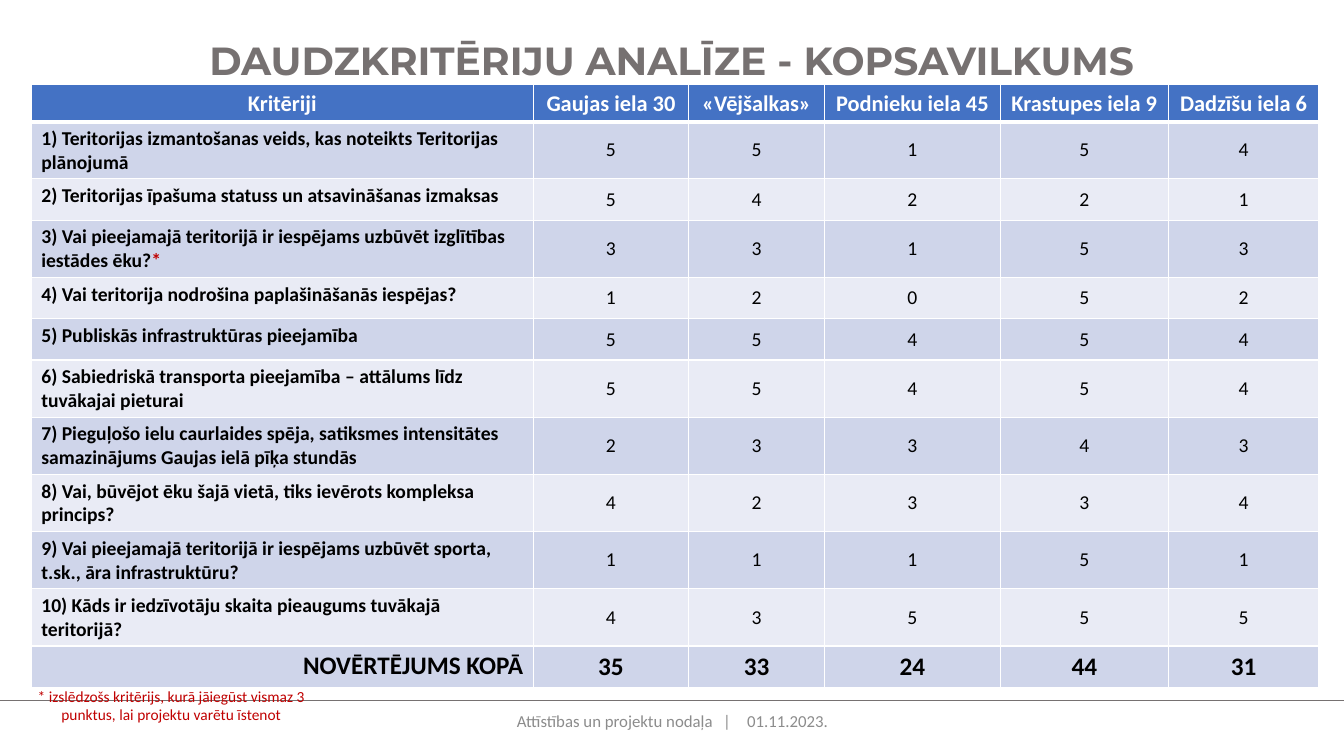
from lxml import etree
from pptx import Presentation
from pptx.dml.color import RGBColor
from pptx.enum.shapes import MSO_CONNECTOR
from pptx.enum.text import MSO_ANCHOR, MSO_AUTO_SIZE, PP_ALIGN
from pptx.oxml.ns import qn
from pptx.util import Inches, Pt

LEFT, CENTER, RIGHT = PP_ALIGN.LEFT, PP_ALIGN.CENTER, PP_ALIGN.RIGHT
TOP, MIDDLE = MSO_ANCHOR.TOP, MSO_ANCHOR.MIDDLE
STRAIGHT, NO_FIT = MSO_CONNECTOR.STRAIGHT, MSO_AUTO_SIZE.NONE

# Content
TITLE = "DAUDZKRITĒRIJU ANALĪZE - KOPSAVILKUMS"
HEADINGS = ["Kritēriji", "Gaujas iela 30", "«Vējšalkas»", "Podnieku iela 45",
            "Krastupes iela 9", "Dadzīšu iela 6"]
# Label, scores, lines that the label takes
CRITERIA = [
    ("1) Teritorijas izmantošanas veids, kas noteikts Teritorijas plānojumā",
     [5, 5, 1, 5, 4], 2),
    ("2) Teritorijas īpašuma statuss un atsavināšanas izmaksas", [5, 4, 2, 2, 1], 1),
    ("3) Vai pieejamajā teritorijā ir iespējams uzbūvēt izglītības iestādes ēku?*",
     [3, 3, 1, 5, 3], 2),
    ("4) Vai teritorija nodrošina paplašināšanās iespējas?", [1, 2, 0, 5, 2], 1),
    ("5) Publiskās infrastruktūras pieejamība", [5, 5, 4, 5, 4], 1),
    ("6) Sabiedriskā transporta pieejamība – attālums līdz tuvākajai pieturai",
     [5, 5, 4, 5, 4], 2),
    ("7) Pieguļošo ielu caurlaides spēja, satiksmes intensitātes samazinājums "
     "Gaujas ielā pīķa stundās", [2, 3, 3, 4, 3], 2),
    ("8) Vai, būvējot ēku šajā vietā, tiks ievērots kompleksa princips?",
     [4, 2, 3, 3, 4], 2),
    ("9) Vai pieejamajā teritorijā ir iespējams uzbūvēt sporta, t.sk., āra "
     "infrastruktūru?", [1, 1, 1, 5, 1], 2),
    ("10) Kāds ir iedzīvotāju skaita pieaugums tuvākajā teritorijā?",
     [4, 3, 5, 5, 5], 2),
]
TOTAL_LABEL = "NOVĒRTĒJUMS KOPĀ"
FOOTNOTE = ("* izslēdzošs kritērijs, kurā jāiegūst vismaz 3 punktus, "
            "lai projektu varētu īstenot")
DEPARTMENT, SEPARATOR, DATE = "Attīstības un projektu nodaļa", " | ", "01.11.2023."

# Formats
COLORS = {"grey": "767171", "footer": "8C8C8C", "header": "4472C4", "odd": "CFD5EA",
          "even": "E9EBF5", "white": "FFFFFF", "black": "000000", "red": "C00000"}
FORMATS = {
    "title": {"name": "Montserrat", "size": Pt(28), "bold": True, "color": "grey"},
    "header": {"name": "Calibri", "size": Pt(16), "bold": True, "color": "white"},
    "label": {"name": "Calibri", "size": Pt(14), "bold": True, "color": "black"},
    "mark": {"name": "Calibri", "size": Pt(14), "bold": True, "color": "red"},
    "score": {"name": "Calibri", "size": Pt(14), "bold": False, "color": "black"},
    "total": {"name": "Calibri", "size": Pt(18), "bold": True, "color": "black"},
    "footnote": {"name": "Calibri", "size": Pt(11), "bold": False, "color": "red"},
    "footer": {"name": "Calibri", "size": Pt(12), "bold": False, "color": "footer"},
}
COLUMN_WIDTHS = [4.98, 1.54, 1.35, 1.74, 1.67, 1.49]
HEADER_HEIGHT = 0.36
LINE_HEIGHTS = {1: 0.41, 2: 0.56}
FOOTER_TOP = 6.95


def color(name):
    return RGBColor.from_string(COLORS[name])


def add_span(para, text, style):
    span = para.add_run()
    span.text = text
    for key, value in FORMATS[style].items():
        if key == "color":
            span.font.color.rgb = color(value)
        else:
            setattr(span.font, key, value)
    return span


def add_box(slide, left, top, width, height):
    box = slide.shapes.add_textbox(*map(Inches, (left, top, width, height)))
    frame = box.text_frame
    frame.word_wrap = True
    frame.vertical_anchor = MIDDLE
    frame.paragraphs[0].alignment = CENTER
    return frame


def set_borders(cell, bottom):
    properties = cell._tc.get_or_add_tcPr()
    for tag, points in (("lnL", 1), ("lnR", 1), ("lnT", 1), ("lnB", bottom)):
        line = etree.SubElement(properties, qn(f"a:{tag}"), w=str(Pt(points)))
        fill = etree.SubElement(line, qn("a:solidFill"))
        etree.SubElement(fill, qn("a:srgbClr"), val=COLORS["white"])


def fill_cell(cell, text, style, fill, alignment=CENTER, anchor=MIDDLE, bottom=1):
    set_borders(cell, bottom)
    cell.fill.solid()
    cell.fill.fore_color.rgb = color(fill)
    cell.vertical_anchor = anchor
    para = cell.text_frame.paragraphs[0]
    para.alignment = alignment
    add_span(para, text.rstrip("*"), style)
    if text.endswith("*"):
        add_span(para, "*", "mark")


def add_score_table(slide):
    heights = [HEADER_HEIGHT] + [LINE_HEIGHTS[lines] for _, _, lines in CRITERIA]
    heights.append(LINE_HEIGHTS[1])
    frame = slide.shapes.add_table(
        len(heights), len(HEADINGS), Inches(0.31), Inches(0.84),
        Inches(sum(COLUMN_WIDTHS)), Inches(sum(heights)))
    table = frame.table
    table.horz_banding = False
    for column, width in zip(table.columns, COLUMN_WIDTHS):
        column.width = Inches(width)
    for row, height in zip(table.rows, heights):
        row.height = Inches(height)

    for column, heading in enumerate(HEADINGS):
        fill_cell(table.cell(0, column), heading, "header", "header", bottom=3)

    # Criteria, then the sum of each site's scores
    totals = [sum(site) for site in zip(*(scores for _, scores, _ in CRITERIA))]
    rows = [(label, scores, "label", "score", LEFT) for label, scores, _ in CRITERIA]
    rows.append((TOTAL_LABEL, totals, "total", "total", RIGHT))
    for index, (label, scores, label_style, score_style, side) in enumerate(rows, 1):
        fill = "odd" if index % 2 else "even"
        fill_cell(table.cell(index, 0), label, label_style, fill, side, TOP)
        for column, score in enumerate(scores, 1):
            fill_cell(table.cell(index, column), str(score), score_style, fill)


def main():
    deck = Presentation()
    deck.slide_width, deck.slide_height = Inches(13.33), Inches(7.5)
    slide = deck.slides.add_slide(deck.slide_layouts[5])

    # Footer and its rule
    footer = add_box(slide, 4.42, FOOTER_TOP, 4.5, 0.4).paragraphs[0]
    add_span(footer, DEPARTMENT, "footer")
    separator = add_span(footer, SEPARATOR, "footer")
    separator.font._element.set("spc", "450")
    add_span(footer, DATE, "footer")
    rule = slide.shapes.add_connector(
        STRAIGHT, 0, Inches(FOOTER_TOP), deck.slide_width, Inches(FOOTER_TOP))
    rule.line.color.rgb = color("grey")
    rule.line.width = Pt(0.5)
    etree.SubElement(rule._element.spPr, qn("a:effectLst"))

    # Title
    title = slide.shapes.title
    title.left, title.top = Inches(0.44), Inches(0.31)
    title.width, title.height = Inches(12.44), Inches(0.57)
    title.text_frame.auto_size = NO_FIT
    title.text_frame.vertical_anchor = TOP
    title.text_frame.paragraphs[0].alignment = CENTER
    add_span(title.text_frame.paragraphs[0], TITLE, "title")

    add_score_table(slide)

    # Footnote to the marked criterion
    footnote = add_box(slide, 0, 6.84, 3.4, 0.31)
    footnote.margin_left = footnote.margin_right = Inches(0.15)
    add_span(footnote.paragraphs[0], FOOTNOTE, "footnote")

    deck.save("out.pptx")


if __name__ == "__main__":
    main()
